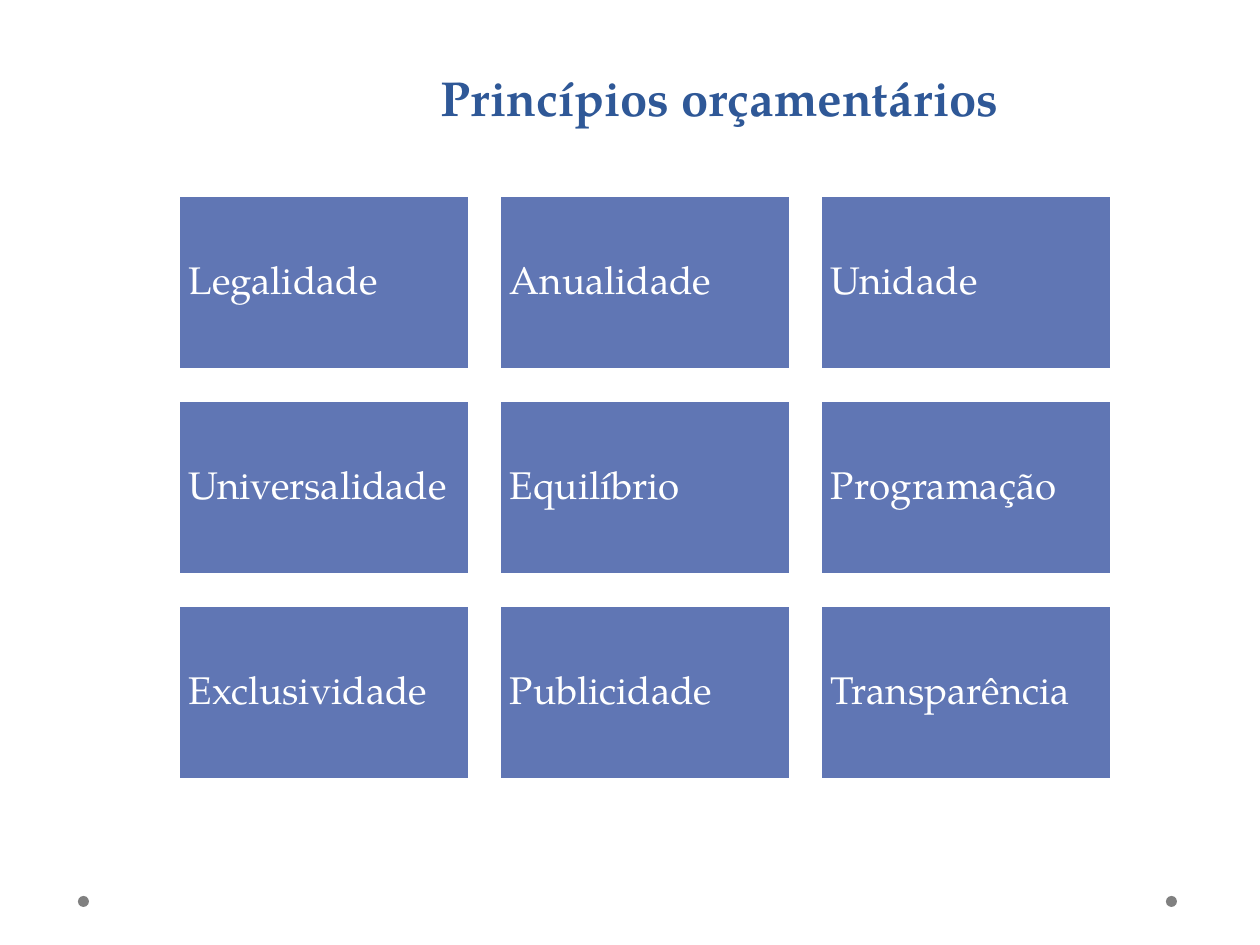
import pptx
import pptx.dml.color
import pptx.enum.shapes
import pptx.enum.text
import pptx.util

PX = 914400 / 126
FONT = "TeX Gyre Pagella"
NAVY = pptx.dml.color.RGBColor(0x2F, 0x58, 0x97)
BLUE = pptx.dml.color.RGBColor(0x60, 0x76, 0xB4)
GRAY = pptx.dml.color.RGBColor(0x80, 0x80, 0x80)
WHITE = pptx.dml.color.RGBColor(0xFF, 0xFF, 0xFF)

PRINCIPLES = [
    ["Legalidade", "Anualidade", "Unidade"],
    ["Universalidade", "Equilíbrio", "Programação"],
    ["Exclusividade", "Publicidade", "Transparência"],
]
GRID_LEFT, GRID_TOP = 178, 195
TILE_WIDTH, TILE_HEIGHT = 292, 175
COLUMN_STEP, ROW_STEP = 321, 205
TILE_INSET = 11


def px(length):
    """Turn a length in pixels into EMU."""
    return pptx.util.Emu(round(length * PX))


def write(frame, text, size, color, alignment, bold=False):
    """Put one formatted paragraph in a text frame and return it."""
    frame.text = text
    frame.word_wrap = True
    paragraph = frame.paragraphs[0]
    paragraph.alignment = alignment
    font = paragraph.runs[0].font
    font.name = FONT
    font.size = pptx.util.Pt(size)
    font.bold = bold
    font.color.rgb = color
    return paragraph


def add_title(slide, text):
    """Place and format the title placeholder."""
    title = slide.shapes.title
    title.left, title.top, title.width, title.height = map(px, (233, 16, 973, 117))
    title.text_frame.vertical_anchor = pptx.enum.text.MSO_ANCHOR.BOTTOM
    heading = write(title.text_frame, text, 28, NAVY,
                    pptx.enum.text.PP_ALIGN.CENTER, bold=True)
    heading.line_spacing = pptx.util.Pt(58)


def add_filled(slide, kind, left, top, width, height, color):
    """Add a preset shape with a solid fill and no shadow."""
    shape = slide.shapes.add_shape(kind, *map(px, (left, top, width, height)))
    shape.shadow.inherit = False
    shape.fill.solid()
    shape.fill.fore_color.rgb = color
    return shape


def add_dot(slide, left):
    """Add a small footer dot."""
    dot = add_filled(slide, pptx.enum.shapes.MSO_SHAPE.OVAL, left, 896, 11, 11, GRAY)
    dot.line.fill.background()


def add_tile(slide, left, top, principle):
    """Add a white-edged tile naming one principle."""
    tile = add_filled(slide, pptx.enum.shapes.MSO_SHAPE.RECTANGLE,
                      left, top, TILE_WIDTH, TILE_HEIGHT, BLUE)
    tile.line.color.rgb = WHITE
    tile.line.width = pptx.util.Pt(2.25)
    frame = tile.text_frame
    frame.margin_left = frame.margin_right = px(TILE_INSET)
    frame.margin_top = frame.margin_bottom = px(TILE_INSET)
    frame.vertical_anchor = pptx.enum.text.MSO_ANCHOR.MIDDLE
    label = write(frame, principle, 22, WHITE, pptx.enum.text.PP_ALIGN.JUSTIFY)
    label.line_spacing = 0.9


def main():
    """Build the slide of budget principles."""
    deck = pptx.Presentation()
    deck.slide_width, deck.slide_height = px(1260), px(945)
    slide = deck.slides.add_slide(deck.slide_layouts[5])
    for left in (1166, 78):
        add_dot(slide, left)
    add_title(slide, "Princípios orçamentários")
    for row, principles in enumerate(PRINCIPLES):
        for column, principle in enumerate(principles):
            add_tile(slide, GRID_LEFT + column * COLUMN_STEP,
                     GRID_TOP + row * ROW_STEP, principle)
    deck.save("out.pptx")


if __name__ == "__main__":
    main()
